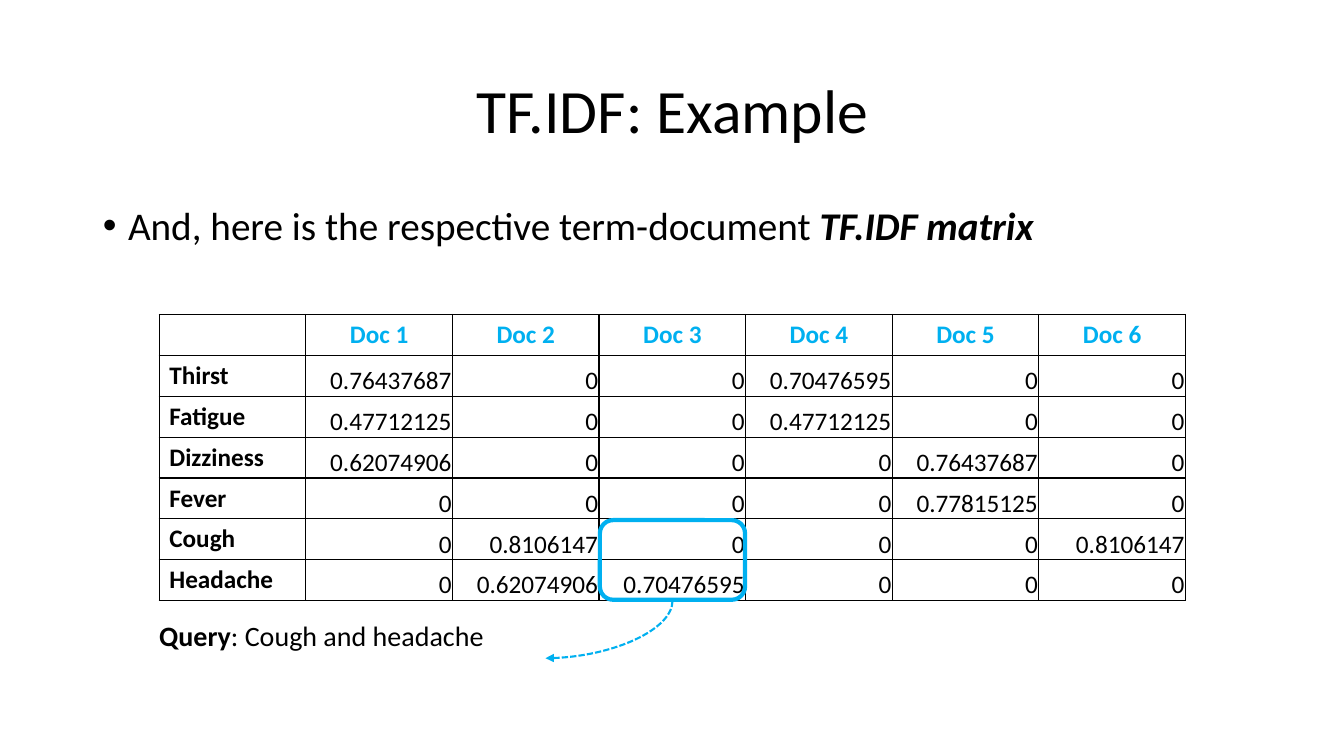
import pptx
import pptx.util
import pptx.dml.color
import pptx.enum.dml
import pptx.enum.shapes
import pptx.enum.text
import pptx.oxml
import pptx.oxml.ns
from pptx.util import Inches, Pt

FONT = "Calibri"
BLACK = "000000"
ACCENT = "00B0F0"

TITLE = "TF.IDF: Example"
STATEMENT = [
    ("And, here is the respective term-document ", False),
    ("TF.IDF matrix", True),
]
QUERY = [("Query", True), (": Cough and headache", False)]
DOCUMENTS = ["Doc 1", "Doc 2", "Doc 3", "Doc 4", "Doc 5", "Doc 6"]
WEIGHTS = {
    "Thirst": ["0.76437687", "0", "0", "0.70476595", "0", "0"],
    "Fatigue": ["0.47712125", "0", "0", "0.47712125", "0", "0"],
    "Dizziness": ["0.62074906", "0", "0", "0", "0.76437687", "0"],
    "Fever": ["0", "0", "0", "0", "0.77815125", "0"],
    "Cough": ["0", "0.8106147", "0", "0", "0", "0.8106147"],
    "Headache": ["0", "0.62074906", "0.70476595", "0", "0", "0"],
}

TABLE_BOX = (1.58, 3.12, 10.18, 2.84)
HIGHLIGHT_BOX = (5.95, 5.16, 1.44, 0.79)
ARROW_START = (6.67, 5.96)
ARROW_END = (5.41, 6.53)

ALIGN = pptx.enum.text.PP_ALIGN
ANCHOR = pptx.enum.text.MSO_ANCHOR


def color(value):
    return pptx.dml.color.RGBColor.from_string(value)


def style(font, size, value=BLACK, bold=None):
    font.name = FONT
    font.size = Pt(size)
    font.color.rgb = color(value)
    font.bold = bold


def add_xml(parent, markup):
    tag, rest = markup.split(" ", 1) if " " in markup else (markup, "/>")
    namespace = pptx.oxml.ns.nsdecls("a")
    element = pptx.oxml.parse_xml(f"<a:{tag} {namespace} {rest}")
    parent.append(element)


def place(shape, left, top, width, height):
    shape.left, shape.top = Inches(left), Inches(top)
    shape.width, shape.height = Inches(width), Inches(height)


def add_borders(cell):
    properties = cell._tc.get_or_add_tcPr()
    for side in ("lnL", "lnR", "lnT", "lnB"):
        add_xml(
            properties,
            f'{side} w="12700"><a:solidFill><a:srgbClr val="{BLACK}"/>'
            f"</a:solidFill></a:{side}>",
        )
    cell.fill.background()


def add_title(slide):
    title = slide.shapes.title
    place(title, 0.92, 0.4, 11.5, 1.45)
    title.text_frame.vertical_anchor = ANCHOR.MIDDLE
    paragraph = title.text_frame.paragraphs[0]
    paragraph.text = TITLE
    paragraph.alignment = ALIGN.CENTER
    paragraph.line_spacing = 0.9
    style(paragraph.font, 44)


def add_statement(slide):
    body = slide.placeholders[1]
    place(body, 0.92, 2, 11.72, 5.1)
    paragraph = body.text_frame.paragraphs[0]
    paragraph.line_spacing = 0.9
    paragraph.space_before = Pt(0)
    properties = paragraph._p.get_or_add_pPr()
    properties.set("marL", str(Inches(0.25)))
    properties.set("indent", str(Inches(-0.25)))
    add_xml(properties, 'buFont typeface="Arial"/>')
    add_xml(properties, 'buChar char="•"/>')
    style(paragraph.font, 28)
    for text, emphasis in STATEMENT:
        run = paragraph.add_run()
        run.text = text
        run.font.bold = run.font.italic = emphasis


def add_matrix(slide):
    rows = [[""] + DOCUMENTS]
    rows += [[term] + values for term, values in WEIGHTS.items()]
    left, top, width, height = TABLE_BOX
    frame = slide.shapes.add_table(
        len(rows), len(rows[0]),
        Inches(left), Inches(top), Inches(width), Inches(height),
    )
    table = frame.table
    for row_index, row in enumerate(rows):
        for column_index, text in enumerate(row):
            cell = table.cell(row_index, column_index)
            add_borders(cell)
            paragraph = cell.text_frame.paragraphs[0]
            paragraph.text = text
            header = row_index == 0
            value = not header and column_index > 0
            style(paragraph.font, 18, ACCENT if header else BLACK, not value)
            if header:
                paragraph.alignment = ALIGN.CENTER
            if value:
                paragraph.alignment = ALIGN.RIGHT
                cell.vertical_anchor = ANCHOR.BOTTOM
                cell.margin_left = cell.margin_right = Inches(0.01)
                cell.margin_top, cell.margin_bottom = Inches(0.01), 0


def add_highlight(slide):
    highlight = slide.shapes.add_shape(
        pptx.enum.shapes.MSO_SHAPE.ROUNDED_RECTANGLE,
        *map(Inches, HIGHLIGHT_BOX),
    )
    highlight.shadow.inherit = False
    highlight.fill.background()
    highlight.line.color.rgb = color(ACCENT)
    highlight.line.width = Pt(3)


def add_query(slide):
    box = slide.shapes.add_textbox(*map(Inches, (1.48, 6.09, 3.45, 0.44)))
    box.text_frame.word_wrap = False
    box.text_frame.auto_size = pptx.enum.text.MSO_AUTO_SIZE.SHAPE_TO_FIT_TEXT
    paragraph = box.text_frame.paragraphs[0]
    style(paragraph.font, 20)
    for text, bold in QUERY:
        run = paragraph.add_run()
        run.text = text
        run.font.bold = bold


def add_arrow(slide):
    (start_x, start_y), (end_x, end_y) = ARROW_START, ARROW_END
    center_x, center_y = (start_x + end_x) / 2, (start_y + end_y) / 2
    half_width, half_height = (end_y - start_y) / 2, (start_x - end_x) / 2
    arrow = slide.shapes.add_connector(
        pptx.enum.shapes.MSO_CONNECTOR.CURVE,
        Inches(center_x - half_width), Inches(center_y - half_height),
        Inches(center_x + half_width), Inches(center_y + half_height),
    )
    properties = arrow._element.spPr
    properties.find(pptx.oxml.ns.qn("a:xfrm")).set("rot", str(90 * 60000))
    geometry = properties.find(pptx.oxml.ns.qn("a:prstGeom"))
    geometry.set("prst", "curvedConnector2")
    arrow.line.color.rgb = color(ACCENT)
    arrow.line.width = Pt(1.5)
    arrow.line.dash_style = pptx.enum.dml.MSO_LINE.SQUARE_DOT
    add_xml(arrow.line._get_or_add_ln(), 'tailEnd type="triangle"/>')
    add_xml(properties, "effectLst")


def main():
    presentation = pptx.Presentation()
    presentation.slide_width = Inches(13.33)
    presentation.slide_height = Inches(7.5)
    slide = presentation.slides.add_slide(presentation.slide_layouts[1])
    add_title(slide)
    add_statement(slide)
    add_matrix(slide)
    add_highlight(slide)
    add_query(slide)
    add_arrow(slide)
    presentation.save("out.pptx")


if __name__ == "__main__":
    main()
